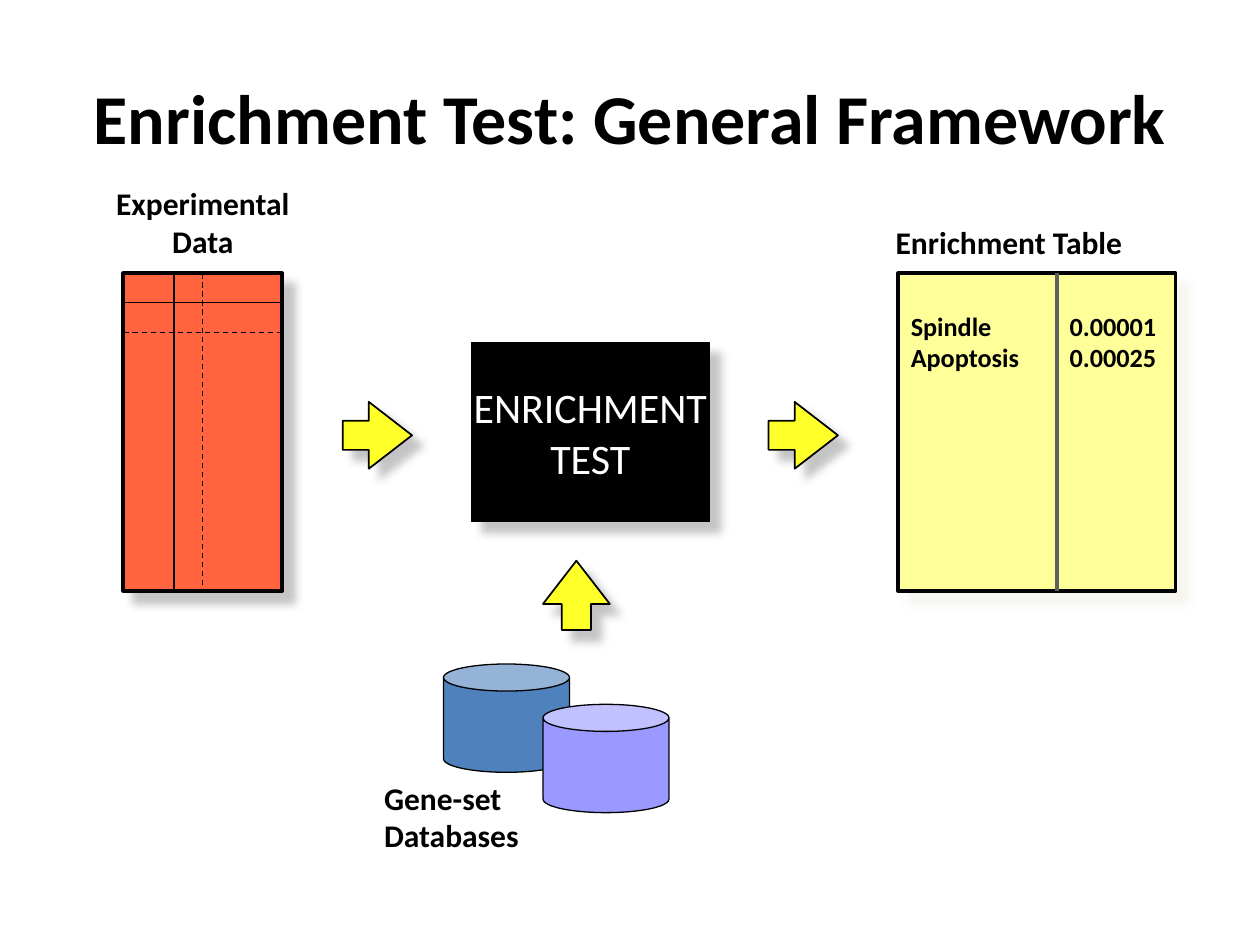
from dataclasses import dataclass
from typing import NamedTuple, Optional

from lxml import etree
from pptx import Presentation
from pptx.dml.color import RGBColor
from pptx.enum.dml import MSO_LINE
from pptx.enum.shapes import MSO_CONNECTOR, MSO_SHAPE
from pptx.enum.text import MSO_ANCHOR, PP_ALIGN
from pptx.oxml.ns import qn
from pptx.util import Emu, Inches, Pt

RECTANGLE, CAN, ARROW = MSO_SHAPE.RECTANGLE, MSO_SHAPE.CAN, MSO_SHAPE.RIGHT_ARROW
STRAIGHT = MSO_CONNECTOR.STRAIGHT
DASH = MSO_LINE.DASH
LEFT, CENTER = PP_ALIGN.LEFT, PP_ALIGN.CENTER
MIDDLE = MSO_ANCHOR.MIDDLE
TITLE_ONLY = 5
COLUMNS, ROWS = 100, 75


@dataclass(frozen=True)
class Theme:
    font: str = "Calibri"
    ink: str = "000000"
    paper: str = "FFFFFF"
    data: str = "FF643F"
    results: str = "FFFF99"
    divider: str = "5F5F5F"
    arrow: str = "FFFF29"
    database_back: str = "4F81BD"
    database_front: str = "9999FF"
    shadow: str = "B2B2B2"
    pale_shadow: str = "EEECE1"
    title_size: float = 40
    test_size: float = 24
    label_size: float = 18
    entry_size: float = 15
    thin: float = 0.75
    medium: float = 1
    thick: float = 2.25


class Box(NamedTuple):
    col: float
    row: float
    cols: float
    rows: float


@dataclass(frozen=True)
class Block:
    kind: int
    box: Box
    fill: str
    line: float
    shadow: Optional[str] = None
    shadow_opacity: int = 75
    adjustments: tuple = ()
    rotation: int = 0


@dataclass(frozen=True)
class Label:
    text: str
    box: Box
    size: float
    align: int = LEFT


@dataclass(frozen=True)
class Rule:
    start: tuple
    end: tuple
    color: str
    width: float
    dash: Optional[int] = None


THEME = Theme()
DATA = Box(9.8, 21.7, 12.6, 25.2)
RESULTS = Box(71.3, 21.7, 22, 25.2)
TEST = Box(37.4, 27.2, 18.9, 14.2)

presentation = Presentation()
presentation.slide_width, presentation.slide_height = Inches(10), Inches(7.5)


def across(cols: float) -> Emu:
    return Emu(round(presentation.slide_width * cols / COLUMNS))


def down(rows: float) -> Emu:
    return Emu(round(presentation.slide_height * rows / ROWS))


def place(box: Box) -> tuple:
    return across(box.col), down(box.row), across(box.cols), down(box.rows)


def write(frame, text: str, size: float, color: str, bold: bool, align: int) -> None:
    frame.text = text
    for paragraph in frame.paragraphs:
        paragraph.alignment = align
        for run in paragraph.runs:
            run.font.name = THEME.font
            run.font.size = Pt(size)
            run.font.bold = bold
            run.font.color.rgb = RGBColor.from_string(color)


def cast_shadow(shape, color: str, opacity: int) -> None:
    effects = shape._element.spPr.find(qn("a:effectLst"))
    outer = etree.SubElement(
        effects, qn("a:outerShdw"), blurRad=str(Pt(5)), dist=str(Pt(8.5)),
        dir=str(45 * 60000), algn="ctr", rotWithShape="0",
    )
    tint = etree.SubElement(outer, qn("a:srgbClr"), val=color)
    etree.SubElement(tint, qn("a:alpha"), val=str(opacity * 1000))


def draw_block(slide, block: Block):
    shape = slide.shapes.add_shape(block.kind, *place(block.box))
    shape.rotation = block.rotation
    for index, value in enumerate(block.adjustments):
        shape.adjustments[index] = value
    shape.fill.solid()
    shape.fill.fore_color.rgb = RGBColor.from_string(block.fill)
    shape.line.color.rgb = RGBColor.from_string(THEME.ink)
    shape.line.width = Pt(block.line)
    shape.shadow.inherit = False
    if block.shadow:
        cast_shadow(shape, block.shadow, block.shadow_opacity)
    return shape


def draw_label(slide, label: Label):
    frame = slide.shapes.add_textbox(*place(label.box)).text_frame
    frame.word_wrap = True
    write(frame, label.text, label.size, THEME.ink, True, label.align)
    return frame


def draw_rule(slide, rule: Rule) -> None:
    (col, row), (end_col, end_row) = rule.start, rule.end
    connector = slide.shapes.add_connector(
        STRAIGHT, across(col), down(row), across(end_col), down(end_row))
    connector.line.color.rgb = RGBColor.from_string(rule.color)
    connector.line.width = Pt(rule.width)
    if rule.dash:
        connector.line.dash_style = rule.dash
    etree.SubElement(connector._element.spPr, qn("a:effectLst"))


def upright(box: Box, col: float, color: str, width: float, dash=None) -> Rule:
    return Rule((col, box.row), (col, box.row + box.rows), color, width, dash)


def level(box: Box, row: float, color: str, width: float, dash=None) -> Rule:
    return Rule((box.col, row), (box.col + box.cols, row), color, width, dash)


def arrow(col: float, row: float, rotation: int = 0) -> Block:
    return Block(ARROW, Box(col, row, 5.5, 5.3), THEME.arrow, THEME.medium,
                 THEME.shadow, adjustments=(0.438, 0.647), rotation=rotation)


def database(col: float, row: float, fill: str) -> Block:
    return Block(CAN, Box(col, row, 10, 8.6), fill, THEME.thin, adjustments=(0.25,))


def set_tab(frame, position: Emu) -> None:
    for paragraph in frame.paragraphs:
        stops = etree.SubElement(paragraph._p.get_or_add_pPr(), qn("a:tabLst"))
        etree.SubElement(stops, qn("a:tab"), pos=str(position), algn="l")


def main() -> None:
    slide = presentation.slides.add_slide(presentation.slide_layouts[TITLE_ONLY])
    title = slide.shapes.title
    title.left, title.top, title.width, title.height = place(Box(5, 3, 90, 12.5))
    title.text_frame.vertical_anchor = MIDDLE
    write(title.text_frame, "Enrichment Test: General Framework",
          THEME.title_size, THEME.ink, True, CENTER)

    for block in (
        Block(RECTANGLE, RESULTS, THEME.results, THEME.thick, THEME.pale_shadow, 50),
        Block(RECTANGLE, DATA, THEME.data, THEME.thick, THEME.shadow),
        database(35.2, 52.7, THEME.database_back),
        database(43.1, 55.9, THEME.database_front),
        arrow(43, 44.6, 270),
        arrow(27.2, 31.9),
        arrow(61, 31.9),
    ):
        draw_block(slide, block)

    test = draw_block(slide, Block(RECTANGLE, TEST, THEME.ink, THEME.thin, THEME.shadow))
    test.text_frame.word_wrap = False
    test.text_frame.vertical_anchor = MIDDLE
    write(test.text_frame, "ENRICHMENT\nTEST", THEME.test_size, THEME.paper, False, CENTER)

    for rule in (
        upright(RESULTS, 83.9, THEME.divider, THEME.thick),
        level(DATA, 24, THEME.ink, THEME.thin),
        upright(DATA, 13.8, THEME.ink, THEME.thin),
        upright(DATA, 16.1, THEME.ink, THEME.thin, DASH),
        level(DATA, 26.4, THEME.ink, THEME.thin, DASH),
    ):
        draw_rule(slide, rule)

    for label in (
        Label("Experimental\nData", Box(2.7, 14.1, 26.8, 7.1), THEME.label_size, CENTER),
        Label("Gene-set\nDatabases", Box(29.5, 61.3, 13.6, 7), THEME.label_size),
        Label("Enrichment Table", Box(70.1, 17.2, 25.2, 4), THEME.label_size),
    ):
        draw_label(slide, label)
    entries = draw_label(slide, Label("Spindle\t0.00001\nApoptosis\t0.00025",
                                      Box(71.3, 24.1, 25.2, 7.3), THEME.entry_size))
    set_tab(entries, across(12.6))

    presentation.save("out.pptx")


if __name__ == "__main__":
    main()
